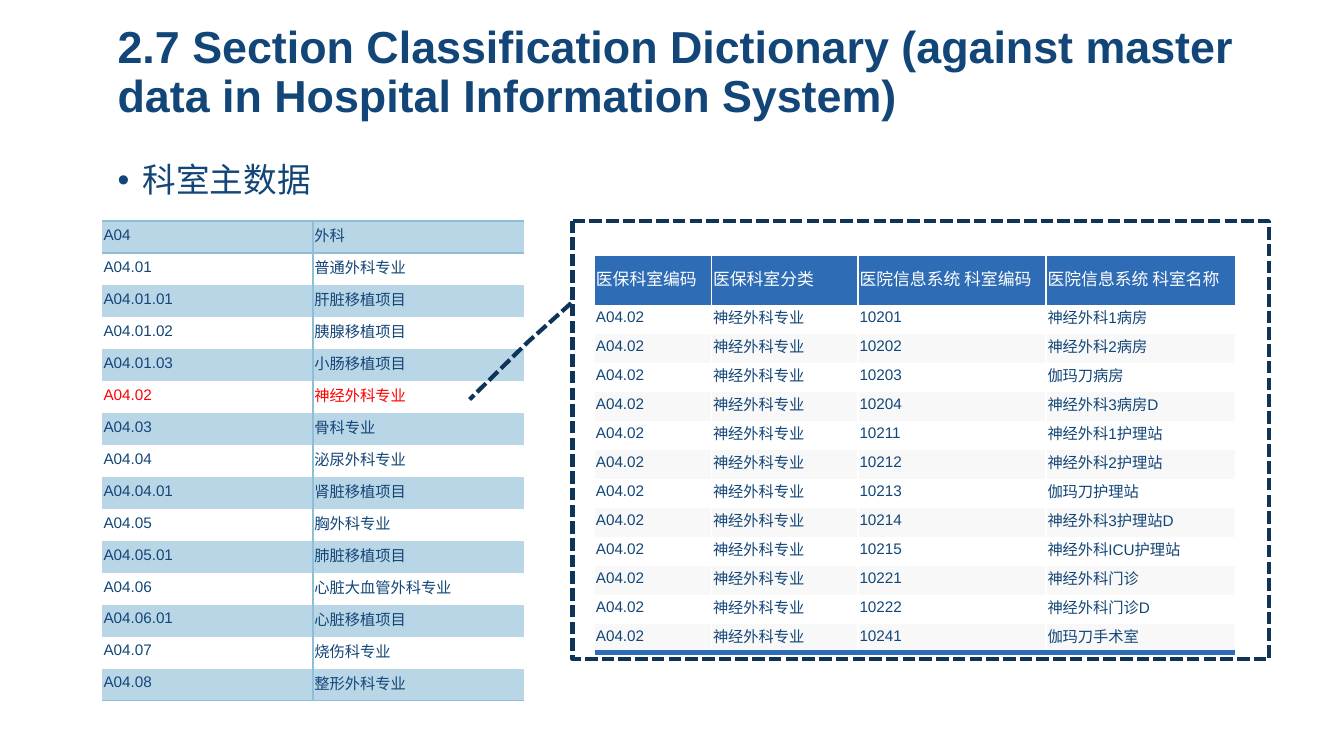
from lxml import etree
from pptx import Presentation
from pptx.dml.color import RGBColor
from pptx.enum import dml, shapes, text
from pptx.oxml import ns
from pptx.util import Pt

COLORS = {
    "navy": "134678", "frame": "0E3459", "header": "2E6CB5", "rule": "8EBFD6",
    "band": "B9D6E6", "grey": "F8F8F8", "white": "FFFFFF", "red": "FF0000",
}
FONT = "Arial"
NO_STYLE = "{2D5ABB26-0587-4C30-8999-92F81FD0307C}"

departments = [
    ("A04", "外科"),
    ("A04.01", "普通外科专业"),
    ("A04.01.01", "肝脏移植项目"),
    ("A04.01.02", "胰腺移植项目"),
    ("A04.01.03", "小肠移植项目"),
    ("A04.02", "神经外科专业"),
    ("A04.03", "骨科专业"),
    ("A04.04", "泌尿外科专业"),
    ("A04.04.01", "肾脏移植项目"),
    ("A04.05", "胸外科专业"),
    ("A04.05.01", "肺脏移植项目"),
    ("A04.06", "心脏大血管外科专业"),
    ("A04.06.01", "心脏移植项目"),
    ("A04.07", "烧伤科专业"),
    ("A04.08", "整形外科专业"),
]
wards = [
    ("10201", "神经外科1病房"),
    ("10202", "神经外科2病房"),
    ("10203", "伽玛刀病房"),
    ("10204", "神经外科3病房D"),
    ("10211", "神经外科1护理站"),
    ("10212", "神经外科2护理站"),
    ("10213", "伽玛刀护理站"),
    ("10214", "神经外科3护理站D"),
    ("10215", "神经外科ICU护理站"),
    ("10221", "神经外科门诊"),
    ("10222", "神经外科门诊D"),
    ("10241", "伽玛刀手术室"),
]
mapping = [("医保科室编码", "医保科室分类", "医院信息系统 科室编码", "医院信息系统 科室名称")]
mapping += [("A04.02", "神经外科专业", code, name) for code, name in wards]


def add_span(para, words, size, color, bold=False):
    span = para.add_run()
    span.text = words
    span.font.name = FONT
    span.font.size = Pt(size)
    span.font.bold = bold
    span.font.color.rgb = RGBColor.from_string(COLORS[color])


def fill_cell(cell, words, size, color, fill, borders):
    """Write a cell; borders maps L, R, T, B (in that order) to (color, width)."""
    cell.margin_left = cell.margin_right = cell.margin_top = Pt(0.75)
    cell.margin_bottom = Pt(2.9)
    cell.vertical_anchor = text.MSO_ANCHOR.MIDDLE
    props = cell._tc.get_or_add_tcPr()
    for side, (line_color, width) in borders.items():
        line = etree.SubElement(props, ns.qn(f"a:ln{side}"), w=str(Pt(width)))
        solid = etree.SubElement(line, ns.qn("a:solidFill"))
        etree.SubElement(solid, ns.qn("a:srgbClr"), val=COLORS[line_color])
    cell.fill.solid()
    cell.fill.fore_color.rgb = RGBColor.from_string(COLORS[fill])
    add_span(cell.text_frame.paragraphs[0], words, size, color)


deck = Presentation()
deck.slide_width, deck.slide_height = Pt(720), Pt(405)
page = deck.slides.add_slide(deck.slide_layouts[5])

# Title and bullet
title = page.shapes.title
title.left, title.top, title.width, title.height = Pt(63), Pt(0), Pt(621), Pt(78.75)
bullet_box = page.shapes.add_textbox(Pt(63), Pt(87.75), Pt(621), Pt(277))
for box, anchor in ((title, text.MSO_ANCHOR.MIDDLE), (bullet_box, text.MSO_ANCHOR.TOP)):
    frame = box.text_frame
    frame.margin_left = frame.margin_right = frame.margin_top = frame.margin_bottom = Pt(0)
    frame.word_wrap = True
    frame.auto_size = text.MSO_AUTO_SIZE.NONE
    frame.vertical_anchor = anchor
    frame.paragraphs[0].alignment = text.PP_ALIGN.LEFT
    frame.paragraphs[0].line_spacing = 0.9
add_span(title.text_frame.paragraphs[0],
         "2.7 Section Classification Dictionary (against master data in Hospital Information System)",
         24, "navy", bold=True)
para = bullet_box.text_frame.paragraphs[0]
para_props = para._p.get_or_add_pPr()
para_props.set("marL", str(Pt(13.5)))
para_props.set("indent", str(Pt(-13.5)))
etree.SubElement(para_props, ns.qn("a:buFont"), typeface=FONT)
etree.SubElement(para_props, ns.qn("a:buChar"), char="•")
add_span(para, "科室主数据", 18, "navy")

# Both table grids
grids = []
for rows, left, top, widths, heights in (
    (departments, 54.75, 118.5, [113, 113], [17.14] * len(departments)),
    (mapping, 318.5, 137.25, [62.75, 78.5, 100.75, 101], [26] + [15.06] * len(wards)),
):
    holder = page.shapes.add_table(len(rows), len(widths), Pt(left), Pt(top),
                                   Pt(sum(widths)), Pt(sum(heights)))
    grid = holder.table
    grid.first_row = grid.horz_banding = False
    grid._tbl.tblPr.find(ns.qn("a:tableStyleId")).text = NO_STYLE
    for column, width in zip(grid.columns, widths):
        column.width = Pt(width)
    for row, height in zip(grid.rows, heights):
        row.height = Pt(height)
    grids.append(grid)
department_grid, mapping_grid = grids

for r, row in enumerate(departments):
    for c, words in enumerate(row):
        borders = {"L" if c else "R": ("rule", 1)}
        if r == 0:
            borders["T"] = ("rule", 1)
        if r in (0, len(departments) - 1):
            borders["B"] = ("rule", 1)
        color = "red" if row[0] == "A04.02" else "navy"
        fill_cell(department_grid.cell(r, c), words, 8.2, color,
                  "white" if r % 2 else "band", borders)

for r, row in enumerate(mapping):
    for c, words in enumerate(row):
        borders = {}
        if c > 0:
            borders["L"] = ("white", 1)
        if c < len(row) - 1:
            borders["R"] = ("white", 1)
        if r == len(mapping) - 1:
            borders["B"] = ("header", 3)
        size, color, fill = (8.2, "navy", "white" if r % 2 else "grey") if r else (9, "white", "header")
        fill_cell(mapping_grid.cell(r, c), words, size, color, fill, borders)

# Dashed callout around the mapping, pointing at A04.02
callout = page.shapes.add_shape(shapes.MSO_SHAPE.LINE_CALLOUT_2,
                                Pt(306.75), Pt(118.5), Pt(373), Pt(234.75))
for i, value in enumerate((0.187, -0.002, 0.277, -0.065, 0.407, -0.148)):
    callout.adjustments[i] = value
callout.shadow.inherit = False
callout.fill.background()
callout.line.color.rgb = RGBColor.from_string(COLORS["frame"])
callout.line.width = Pt(2.25)
callout.line.dash_style = dml.MSO_LINE.SQUARE_DOT

deck.save("out.pptx")
